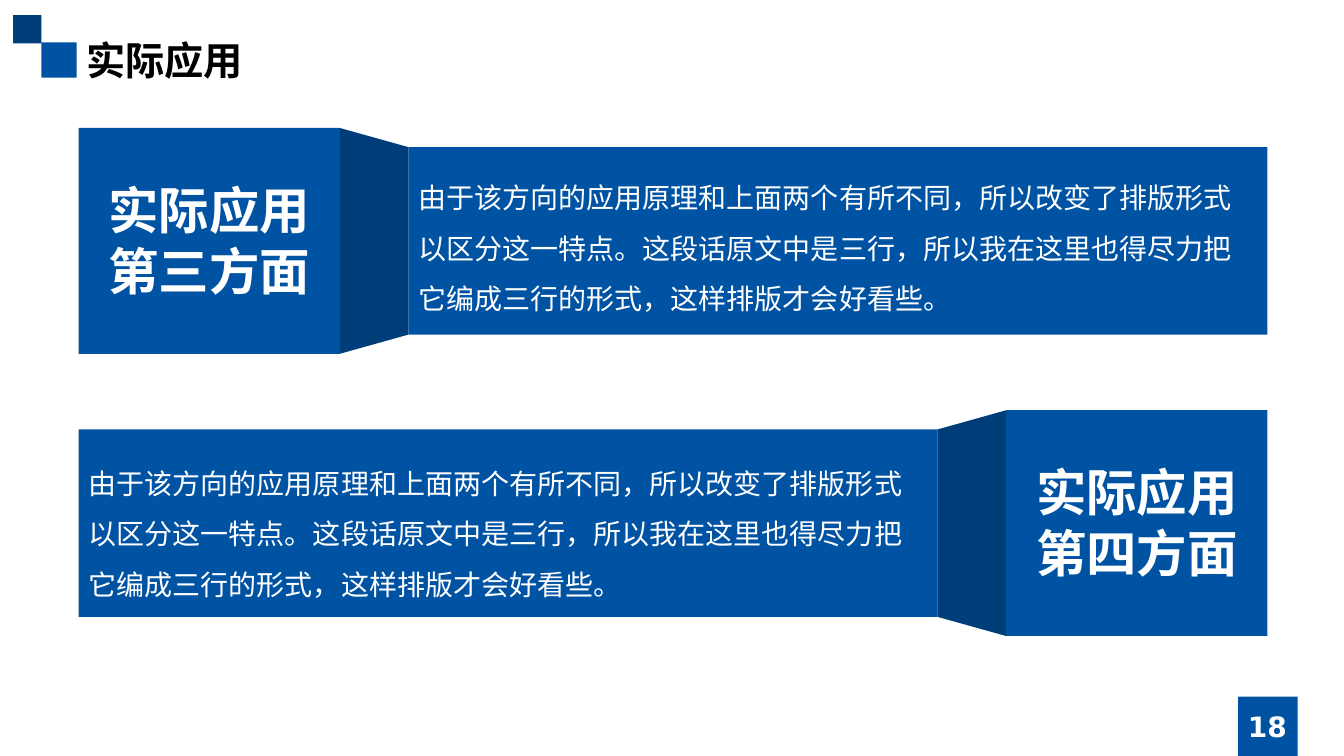
from pptx import Presentation
from pptx import util as u
from pptx.dml.color import RGBColor
from pptx.enum import shapes, text
from lxml import etree

COLORS = {"blue": "0053A3", "navy": "003E7A", "white": "FFFFFF", "black": "000000"}
CJK = "Noto Sans CJK SC"
A = "http://schemas.openxmlformats.org/drawingml/2006/main"

deck = Presentation()
deck.slide_width, deck.slide_height = u.Inches(13.33), u.Inches(7.5)
slide = deck.slides.add_slide(deck.slide_layouts[6])


def add_block(box, color, kind=shapes.MSO_SHAPE.RECTANGLE):
    block = slide.shapes.add_shape(kind, *map(u.Inches, box))
    block.shadow.inherit = False
    block.fill.solid()
    block.fill.fore_color.rgb = RGBColor.from_string(COLORS[color])
    block.line.fill.background()
    return block


def add_text(box, lines, size, color="white", font="Arial", bold=True,
             align=text.PP_ALIGN.LEFT, spacing=None):
    frame = slide.shapes.add_textbox(*map(u.Inches, box)).text_frame
    frame.word_wrap = True
    for i, line in enumerate(lines):
        paragraph = frame.paragraphs[0] if i == 0 else frame.add_paragraph()
        paragraph.alignment = align
        paragraph.line_spacing = spacing
        run = paragraph.add_run()
        run.text = line
        run.font.size, run.font.bold, run.font.name = u.Pt(size), bold, font
        run.font.color.rgb = RGBColor.from_string(COLORS[color])
        # East Asian typeface
        etree.SubElement(run.font._element, f"{{{A}}}ea", typeface=CJK)
    return frame


# Corner squares, title and page number
add_block((0.41, 0.42, 0.35, 0.35), "blue")
add_block((0.13, 0.15, 0.28, 0.28), "navy")
add_block((12.28, 6.91, 0.59, 0.59), "blue")
add_text((0.76, 0.31, 11.81, 0.57), ["实际应用"], 28, "black", CJK)
page_number = add_text((11.81, 7.01, 1.52, 0.4), ["18"], 20, font="DejaVu Sans",
                       align=text.PP_ALIGN.CENTER)
page_number.vertical_anchor = text.MSO_ANCHOR.MIDDLE

# Two mirrored banners: heading panel, folded edge, body panel
LEFT, RIGHT = 0.78, 12.57
HEAD_W, HEAD_H = 2.59, 2.24
BODY_W, BODY_H = 8.52, 1.86
FOLD_W = RIGHT - LEFT - HEAD_W - BODY_W
BODY = ("由于该方向的应用原理和上面两个有所不同，所以改变了排版形式"
        "以区分这一特点。这段话原文中是三行，所以我在这里也得尽力把"
        "它编成三行的形式，这样排版才会好看些。")

banners = [
    # top, heading left, body left, fold left, fold rotation, body text top, aspect
    (1.27, LEFT, RIGHT - BODY_W, LEFT + HEAD_W, 90, 1.58, "第三方面"),
    (4.07, RIGHT - HEAD_W, LEFT, LEFT + BODY_W, 270, 4.41, "第四方面"),
]
for top, head_x, body_x, fold_x, turn, body_text_y, aspect in banners:
    middle = top + HEAD_H / 2
    add_block((head_x, top, HEAD_W, HEAD_H), "blue")
    add_block((body_x, middle - BODY_H / 2, BODY_W, BODY_H), "blue")
    fold = add_block((fold_x + (FOLD_W - HEAD_H) / 2, middle - FOLD_W / 2, HEAD_H, FOLD_W),
                     "navy", shapes.MSO_SHAPE.TRAPEZOID)
    fold.adjustments[0] = (HEAD_H - BODY_H) / 2 / FOLD_W
    fold.rotation = turn
    add_text((head_x, top + 0.46, HEAD_W, 1.31), ["实际应用", aspect], 36,
             align=text.PP_ALIGN.CENTER)
    add_text((body_x, body_text_y, BODY_W, 1.6), [BODY], 20, bold=False, spacing=1.5)

deck.save("out.pptx")
